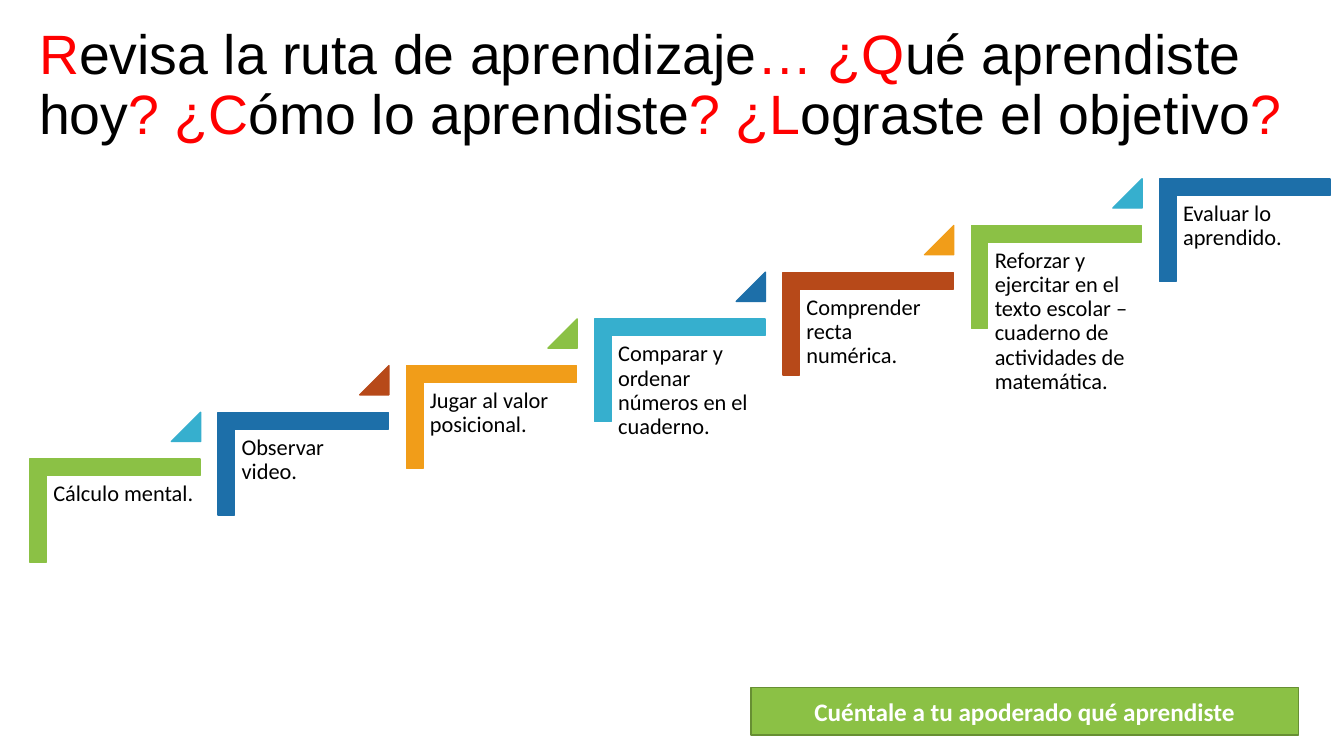
from dataclasses import dataclass

from pptx import Presentation
from pptx.dml.color import RGBColor
from pptx.enum.shapes import MSO_SHAPE
from pptx.enum.text import MSO_ANCHOR, PP_ALIGN
from pptx.shapes.autoshape import Shape
from pptx.slide import Slide
from pptx.util import Pt


@dataclass(frozen=True)
class Theme:
    title_font: str = "Arial"
    body_font: str = "Calibri"
    title_size: float = 39.6
    banner_size: float = 18
    step_size: float = 16
    black: str = "000000"
    white: str = "FFFFFF"
    red: str = "FF0000"
    green: str = "8BC145"
    dark_green: str = "678F33"
    stair_colors: tuple[str, ...] = ("8BC145", "36AFCE", "1D6FA9", "B74919", "F19D19")


@dataclass(frozen=True)
class Box:
    left: float
    top: float
    width: float
    height: float

    def climbed(self, steps: int) -> "Box":
        return Box(self.left + steps * STEP_RUN, self.top - steps * STEP_RISE,
                   self.width, self.height)

    def lengths(self) -> tuple[Pt, Pt, Pt, Pt]:
        return Pt(self.left), Pt(self.top), Pt(self.width), Pt(self.height)


@dataclass(frozen=True)
class TitlePart:
    text: str
    color: str


THEME = Theme()
STEP_RUN = 134.5
STEP_RISE = 33.36
LINE_SPACING = 0.9
STEP_INSET = 5
CORNER_THICKNESS = 0.161

TITLE_BOX = Box(20.9, 9.4, 918.7, 104.4)
BANNER_BOX = Box(536.4, 491, 391, 34)
CORNER_BOX = Box(45.4, 303.8, 73.4, 121.7)
LABEL_BOX = Box(33.1, 339.8, 110.2, 96.5)
TRIANGLE_BOX = Box(122.4, 294.5, 20.9, 20.9)

TITLE_PARTS = (
    TitlePart("R", THEME.red),
    TitlePart("evisa la ruta de aprendizaje", THEME.black),
    TitlePart("… ¿Q", THEME.red),
    TitlePart("ué aprendiste hoy", THEME.black),
    TitlePart("? ¿C", THEME.red),
    TitlePart("ómo lo aprendiste", THEME.black),
    TitlePart("? ¿L", THEME.red),
    TitlePart("ograste el objetivo", THEME.black),
    TitlePart("?", THEME.red),
)
STEPS = (
    "Cálculo mental.",
    "Observar video.",
    "Jugar al valor posicional.",
    "Comparar y ordenar números en el cuaderno.",
    "Comprender recta numérica.",
    "Reforzar y ejercitar en el texto escolar – cuaderno de actividades de matemática.",
    "Evaluar lo aprendido.",
)


def add_filled(slide: Slide, kind: MSO_SHAPE, box: Box, fill: str, line: str) -> Shape:
    shape = slide.shapes.add_shape(kind, *box.lengths())
    shape.shadow.inherit = False
    shape.fill.solid()
    shape.fill.fore_color.rgb = RGBColor.from_string(fill)
    shape.line.color.rgb = RGBColor.from_string(line)
    shape.line.width = Pt(1)
    return shape


def add_title(slide: Slide) -> None:
    frame = slide.shapes.add_textbox(*TITLE_BOX.lengths()).text_frame
    frame.word_wrap = True
    frame.vertical_anchor = MSO_ANCHOR.MIDDLE
    paragraph = frame.paragraphs[0]
    paragraph.line_spacing = LINE_SPACING
    paragraph.font.name = THEME.title_font
    paragraph.font.size = Pt(THEME.title_size)
    for part in TITLE_PARTS:
        run = paragraph.add_run()
        run.text = part.text
        run.font.color.rgb = RGBColor.from_string(part.color)


def add_banner(slide: Slide) -> None:
    banner = add_filled(slide, MSO_SHAPE.RECTANGLE, BANNER_BOX, THEME.green, THEME.dark_green)
    banner.text_frame.word_wrap = True
    banner.text_frame.vertical_anchor = MSO_ANCHOR.MIDDLE
    paragraph = banner.text_frame.paragraphs[0]
    paragraph.text = "Cuéntale a tu apoderado qué aprendiste"
    paragraph.alignment = PP_ALIGN.CENTER
    paragraph.font.name = THEME.body_font
    paragraph.font.size = Pt(THEME.banner_size)
    paragraph.font.bold = True
    paragraph.font.color.rgb = RGBColor.from_string(THEME.white)


def add_label(slide: Slide, box: Box, text: str) -> None:
    frame = slide.shapes.add_textbox(*box.lengths()).text_frame
    frame.word_wrap = True
    frame.margin_left = frame.margin_right = Pt(STEP_INSET)
    frame.margin_top = frame.margin_bottom = Pt(STEP_INSET)
    paragraph = frame.paragraphs[0]
    paragraph.text = text
    paragraph.line_spacing = LINE_SPACING
    paragraph.font.name = THEME.body_font
    paragraph.font.size = Pt(THEME.step_size)
    paragraph.font.color.rgb = RGBColor.from_string(THEME.black)


def stair_color(position: int) -> str:
    return THEME.stair_colors[position % len(THEME.stair_colors)]


def add_step(slide: Slide, index: int, text: str) -> None:
    color = stair_color(2 * index)
    corner = add_filled(slide, MSO_SHAPE.CORNER, CORNER_BOX.climbed(index), color, color)
    corner.rotation = 90
    corner.adjustments[0] = corner.adjustments[1] = CORNER_THICKNESS
    add_label(slide, LABEL_BOX.climbed(index), text)
    if index < len(STEPS) - 1:
        color = stair_color(2 * index + 1)
        triangle = add_filled(slide, MSO_SHAPE.ISOSCELES_TRIANGLE,
                              TRIANGLE_BOX.climbed(index), color, color)
        triangle.adjustments[0] = 1


def main() -> None:
    presentation = Presentation()
    presentation.slide_width = Pt(960)
    presentation.slide_height = Pt(540)
    slide = presentation.slides.add_slide(presentation.slide_layouts[6])
    add_title(slide)
    add_banner(slide)
    for index, text in enumerate(STEPS):
        add_step(slide, index, text)
    presentation.save("out.pptx")


if __name__ == "__main__":
    main()
